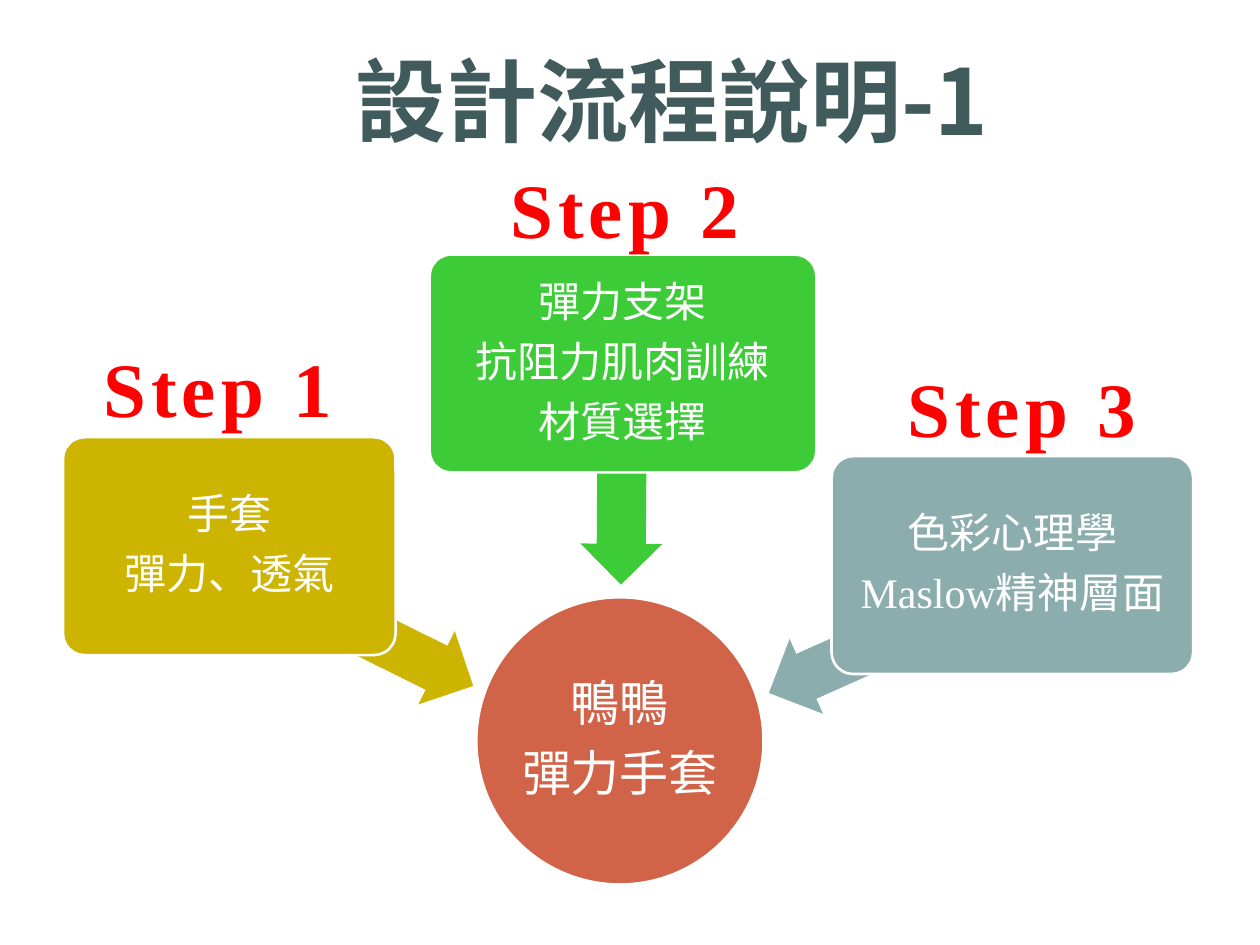
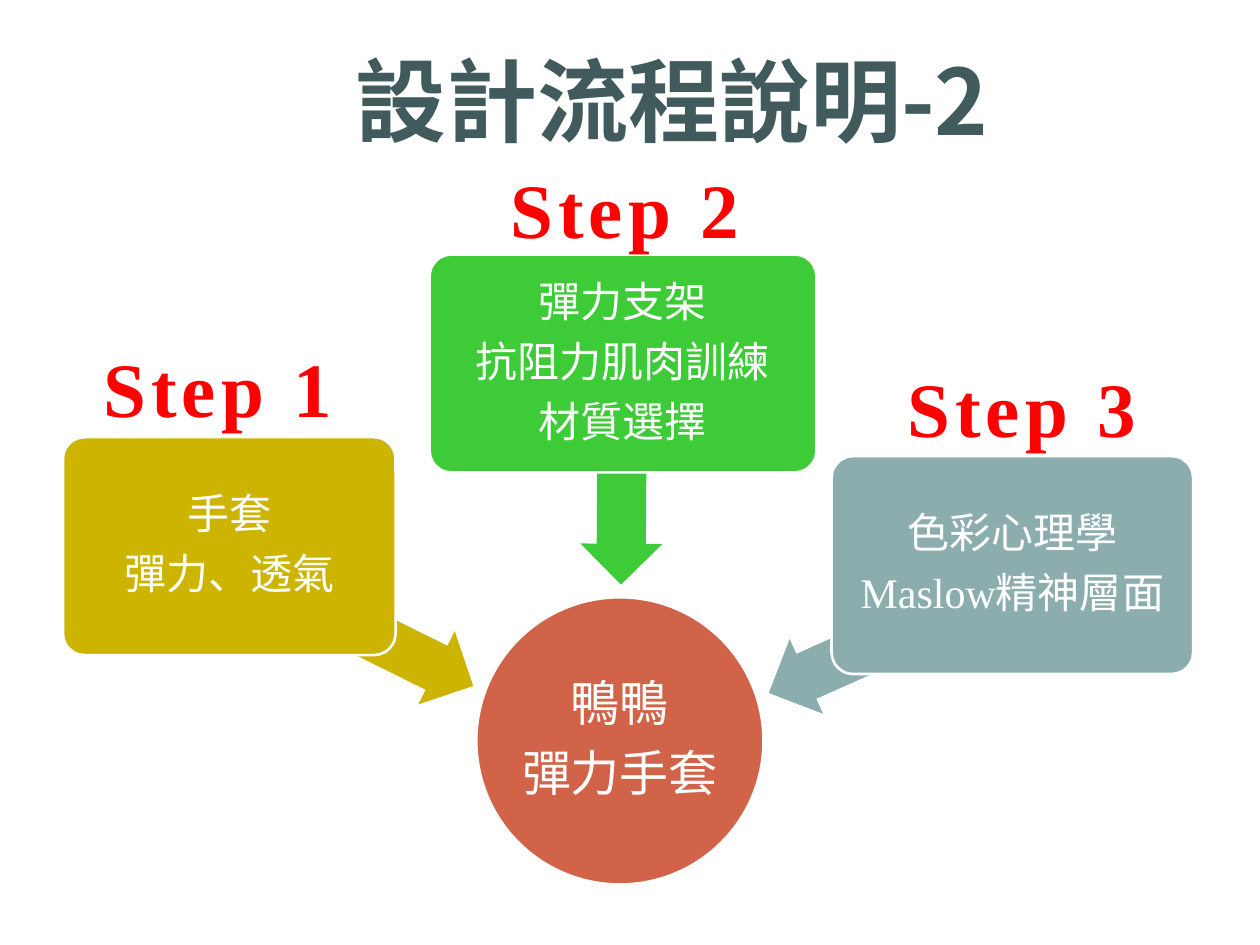
import pptx
import pptx.util
import pptx.dml.color
import pptx.enum.shapes
import pptx.enum.text
import pptx.oxml
import pptx.oxml.ns
import lxml.etree

COLORS = {
    "title": "415B5C", "step": "FF0000", "white": "FFFFFF", "goal": "D16349",
    "glove": "CCB400", "frame": "3ECB38", "mind": "8CADAE",
}
SERIF = "Times New Roman"
SANS = "Noto Sans CJK SC"
SHAPES = pptx.enum.shapes.MSO_SHAPE
ANCHORS = pptx.enum.text.MSO_ANCHOR

deck = pptx.Presentation()
deck.slide_width = pptx.util.Inches(10)
deck.slide_height = pptx.util.Inches(7.5)
CELL = deck.slide_width // 100
BOX_ROWS = 17.3
ARROW_ROWS = 6.5
LABEL_COLUMNS, LABEL_ROWS = 24.4, 8.4

steps = [
    {"color": "glove", "box": (5, 34.7, 26.4), "label": (5.1, 26.5),
     "arrow": (16.7, 46.3, 22, 206.4), "lines": ["手套", "彈力、透氣"]},
    {"color": "frame", "box": (34.1, 20.2, 30.7), "label": (37.4, 12.3),
     "arrow": (40.6, 34.4, 17.5, 270.4), "lines": ["彈力支架", "抗阻力肌肉訓練", "材質選擇"]},
    {"color": "mind", "box": (66, 36.2, 28.7), "label": (68.9, 28.1),
     "arrow": (60.1, 47.4, 21.4, 336), "lines": ["色彩心理學", "Maslow精神層面"]},
]


def add_block(page, kind, place, fill, outlined=True):
    block = page.shapes.add_shape(kind, *[round(CELL * cells) for cells in place])
    block.shadow.inherit = False
    block.fill.solid()
    block.fill.fore_color.rgb = pptx.dml.color.RGBColor.from_string(COLORS[fill])
    if outlined:
        block.line.color.rgb = pptx.dml.color.RGBColor.from_string(COLORS["white"])
        block.line.width = pptx.util.Pt(1.5)
    else:
        block.line.fill.background()
    return block


def write_lines(box, lines, size, color, font=SERIF, bold=False, anchor=ANCHORS.MIDDLE,
                margin=None, spaced=False):
    frame = box.text_frame
    frame.word_wrap = not spaced
    frame.vertical_anchor = anchor
    if margin is not None:
        frame.margin_left = frame.margin_right = pptx.util.Inches(margin)
        frame.margin_top = frame.margin_bottom = pptx.util.Inches(margin)
    frame.text = "\n".join(lines)
    for para in frame.paragraphs:
        para.alignment = pptx.enum.text.PP_ALIGN.CENTER
        para.font.name = font
        para.font.size = pptx.util.Pt(size)
        para.font.bold = bold
        para.font.color.rgb = pptx.dml.color.RGBColor.from_string(COLORS[color])
        if spaced:
            para.line_spacing = 0.9
            para.space_after = pptx.util.Pt(1)
            after = para._p.pPr.find(pptx.oxml.ns.qn("a:spcAft"))
            after.clear()
            lxml.etree.SubElement(after, pptx.oxml.ns.qn("a:spcPct"), val="35000")


for number in (1, 2):
    page = deck.slides.add_slide(deck.slide_layouts[6])

    goal = add_block(page, SHAPES.OVAL, (37.8, 47.4, 22.8, 22.8), "goal")
    write_lines(goal, ["鴨鴨", "彈力手套"], 28, "white", margin=0.02, spaced=True)

    for step in steps:
        left, top, width, angle = step["arrow"]
        arrow = add_block(page, SHAPES.LEFT_ARROW, (left, top, width, ARROW_ROWS),
                          step["color"], outlined=False)
        arrow.adjustments[0] = 0.6
        arrow.rotation = angle

        box = add_block(page, SHAPES.ROUNDED_RECTANGLE, (*step["box"], BOX_ROWS), step["color"])
        box.adjustments[0] = 0.1
        write_lines(box, step["lines"], 24, "white", margin=0.05, spaced=True)

    title_place = (6.7, 4.4, 93.3, 8.3)
    title = page.shapes.add_textbox(*[round(CELL * cells) for cells in title_place])
    write_lines(title, [f"設計流程說明-{number}"], 52, "title", SANS, True, ANCHORS.BOTTOM)

    for index, step in enumerate(steps, 1):
        label_place = (*step["label"], LABEL_COLUMNS, LABEL_ROWS)
        label = page.shapes.add_textbox(*[round(CELL * cells) for cells in label_place])
        write_lines(label, [f"Step {index}"], 44, "step", bold=True, anchor=ANCHORS.TOP)
        style = label.text_frame.paragraphs[0].font._element
        style.set("spc", "300")
        outline = pptx.oxml.parse_xml(
            f'<a:ln {pptx.oxml.ns.nsdecls("a")} w="11430"><a:solidFill>'
            f'<a:srgbClr val="{COLORS["step"]}"/></a:solidFill></a:ln>')
        glow = pptx.oxml.parse_xml(
            f'<a:effectLst {pptx.oxml.ns.nsdecls("a")}>'
            '<a:outerShdw blurRad="25400" dist="12700" dir="2700000">'
            f'<a:srgbClr val="{COLORS["goal"]}"/></a:outerShdw></a:effectLst>')
        style.insert(0, outline)
        style.insert(2, glow)

deck.save("out.pptx")
